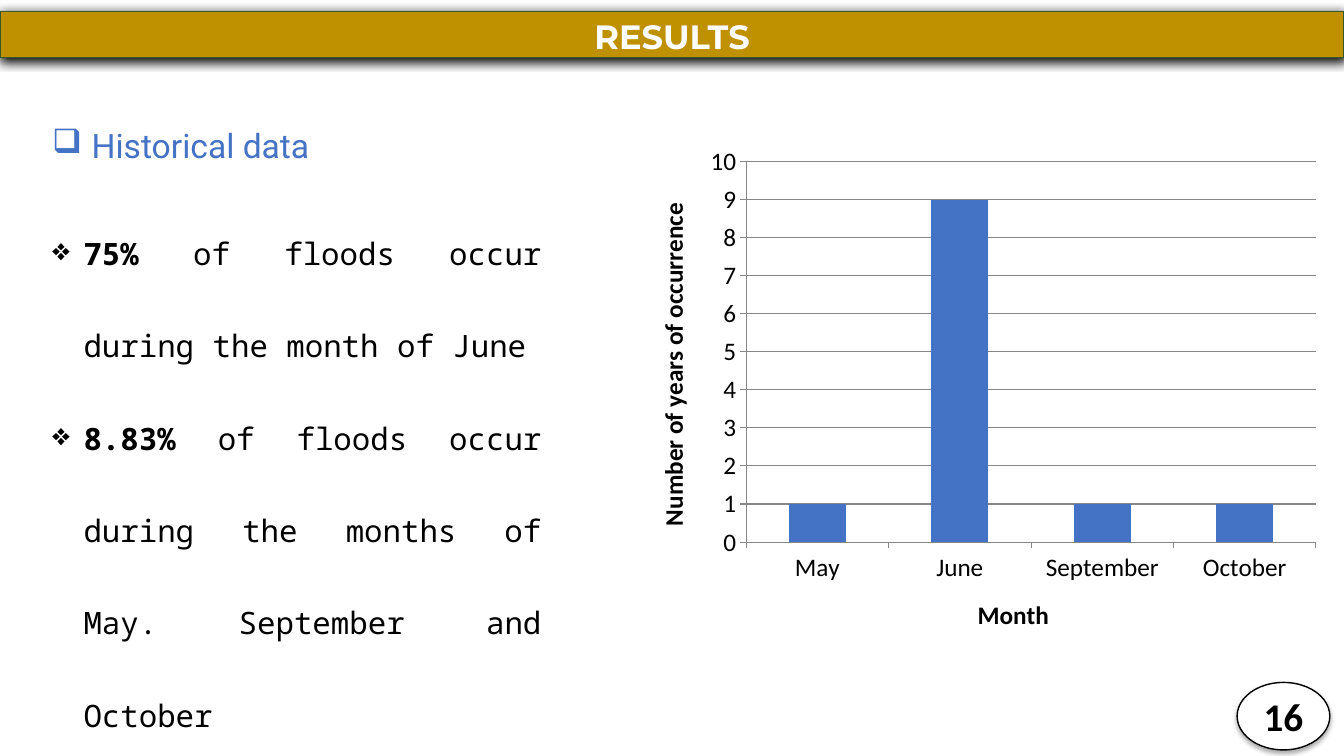
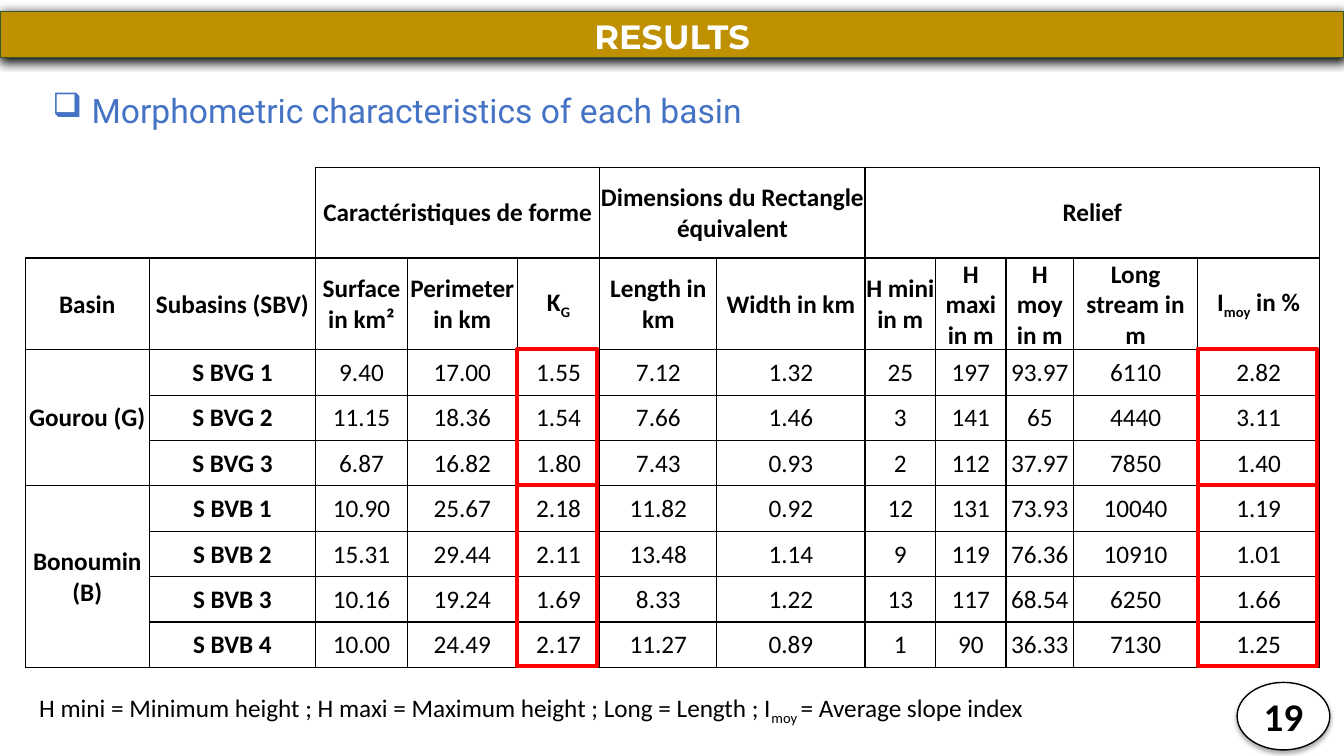
from itertools import accumulate

from lxml.etree import SubElement
from pptx import Presentation
from pptx.chart.data import CategoryChartData
from pptx.dml.color import RGBColor
from pptx.enum.chart import XL_CHART_TYPE as Chart, XL_TICK_MARK as Tick
from pptx.enum.shapes import MSO_SHAPE as Shape
from pptx.enum.text import MSO_ANCHOR as Anchor, MSO_AUTO_SIZE as AutoSize, PP_ALIGN as Align
from pptx.oxml import parse_xml
from pptx.oxml.ns import nsdecls, qn
from pptx.util import Emu, Inches, Pt

WIDTH, HEIGHT = Inches(13.33), Inches(7.5)
BLACK = RGBColor(0x00, 0x00, 0x00)
WHITE = RGBColor(0xFF, 0xFF, 0xFF)
GOLD = RGBColor(0xBF, 0x90, 0x00)
DARK_GREEN = RGBColor(0x38, 0x57, 0x23)
BLUE = RGBColor(0x44, 0x72, 0xC4)
RED = RGBColor(0xFF, 0x00, 0x00)
GREY = RGBColor(0x86, 0x86, 0x86)
BODY, TITLE, HEADING, MONO = "Calibri", "Montserrat", "Roboto", "Noto Sans Mono"
SUB = {"base": -25}

COLUMNS = [1.23, 1.65, 0.91, 1.09, 0.82, 1.16, 1.47, 0.7, 0.7, 0.67, 1.23, 1.21]
ROWS = [2, 2] + [1] * 7
GROUPS = [(2, 3, "Caractéristiques de forme"),
          (5, 2, "Dimensions du Rectangle équivalent"),
          (7, 5, "Relief")]
HEADERS = ["Basin", "Subasins (SBV)", "Surface in km²", "Perimeter in km",
           [("K", {}), ("G", SUB)], "Length in km", "Width in km", "H mini in m",
           "H maxi in m", "H moy in m", "Long stream in m",
           [("I", {}), ("moy", SUB), (" in %", {})]]
BASINS = {
    "Gourou (G)": [
        "S BVG 1|9.40|17.00|1.55|7.12|1.32|25|197|93.97|6110|2.82",
        "S BVG 2|11.15|18.36|1.54|7.66|1.46|3|141|65|4440|3.11",
        "S BVG 3|6.87|16.82|1.80|7.43|0.93|2|112|37.97|7850|1.40"],
    "Bonoumin (B)": [
        "S BVB 1|10.90|25.67|2.18|11.82|0.92|12|131|73.93|10040|1.19",
        "S BVB 2|15.31|29.44|2.11|13.48|1.14|9|119|76.36|10910|1.01",
        "S BVB 3|10.16|19.24|1.69|8.33|1.22|13|117|68.54|6250|1.66",
        "S BVB 4|10.00|24.49|2.17|11.27|0.89|1|90|36.33|7130|1.25"],
}
KEY_COLUMNS = (4, 11)


def area(x, y, w, h):
    """Box from percentages of the slide's width and height."""
    return [Emu(round(share * side / 100))
            for share, side in ((x, WIDTH), (y, HEIGHT), (w, WIDTH), (h, HEIGHT))]


def write(frame, *paragraphs, font=BODY, size=18, color=BLACK, bold=False,
          align=Align.LEFT, spacing=None, bullet=None, indent=0.31, anchor=Anchor.TOP):
    """Each paragraph is a string or a list of (text, overrides)."""
    frame.word_wrap = True
    frame.vertical_anchor = anchor
    for i, pieces in enumerate(paragraphs):
        para = frame.add_paragraph() if i else frame.paragraphs[0]
        para.alignment = align
        if spacing:
            para.line_spacing = spacing
        if bullet:
            props = para._p.get_or_add_pPr()
            props.set("marL", str(Inches(indent)))
            props.set("indent", str(-Inches(indent)))
            SubElement(props, qn("a:buChar")).set("char", bullet)
        for text, own in [(pieces, {})] if isinstance(pieces, str) else pieces:
            run = para.add_run()
            run.text = text
            run.font.name, run.font.size = font, Pt(size)
            run.font.bold = own.get("bold", bold)
            run.font.color.rgb = color
            if "base" in own:
                run._r.get_or_add_rPr().set("baseline", str(own["base"] * 1000))


def add_text(slide, box, *paragraphs, **style):
    frame = slide.shapes.add_textbox(*box).text_frame
    write(frame, *paragraphs, **style)
    frame.auto_size = AutoSize.SHAPE_TO_FIT_TEXT


def outline(shape, fill, line, weight):
    if fill is None:
        shape.fill.background()
    else:
        shape.fill.solid()
        shape.fill.fore_color.rgb = fill
    shape.line.color.rgb, shape.line.width = line, Pt(weight)


def cast_shadow(shape, alpha, blur, distance):
    shape._element.spPr.append(parse_xml(
        f'<a:effectLst {nsdecls("a")}><a:outerShdw blurRad="{Pt(blur)}" dist="{Pt(distance)}" '
        f'dir="5400000" algn="t" rotWithShape="0"><a:srgbClr val="{BLACK}">'
        f'<a:alpha val="{alpha * 1000}"/></a:srgbClr></a:outerShdw></a:effectLst>'))


# Parts shared by the slides
def start_slide(prs, number, heading, heading_box):
    slide = prs.slides.add_slide(prs.slide_layouts[5])
    band = slide.shapes.title
    band.left, band.top, band.width, band.height = area(0, 1.47, 100, 6.13)
    outline(band, GOLD, DARK_GREEN, 0.75)
    cast_shadow(band, 100, 8.5, 1)
    write(band.text_frame, "RESULTS", font=TITLE, size=24, color=WHITE, bold=True,
          align=Align.CENTER)
    band.text_frame.auto_size = AutoSize.NONE

    add_text(slide, heading_box, heading, font=HEADING, size=24, color=BLUE,
             spacing=1.5, bullet="❑", indent=0.39)

    badge = slide.shapes.add_shape(Shape.FLOWCHART_CONNECTOR, *area(92.05, 90.27, 6.9, 8.93))
    outline(badge, WHITE, BLACK, 1)
    cast_shadow(badge, 32, 3.5, 2.2)
    write(badge.text_frame, str(number), size=28, bold=True, align=Align.CENTER,
          anchor=Anchor.MIDDLE)
    return slide


# Flood months chart
def add_flood_chart(slide, box):
    data = CategoryChartData()
    data.categories = ["May", "June", "September", "October"]
    data.add_series("Series 1", [1, 9, 1, 1])
    chart = slide.shapes.add_chart(Chart.COLUMN_STACKED, *box, data).chart
    chart.has_title = chart.has_legend = False
    chart.font.name, chart.font.size, chart.font.color.rgb = BODY, Pt(18), BLACK

    plot = chart.plots[0]
    plot.gap_width, plot.overlap, plot.vary_by_categories = 150, 100, False
    bars = plot.series[0].format.fill
    bars.solid()
    bars.fore_color.rgb = BLUE

    months, years = chart.category_axis, chart.value_axis
    for axis, label in ((months, "Month"), (years, "Number of years of occurrence")):
        write_axis_title(axis, label)
        axis.major_tick_mark, axis.minor_tick_mark = Tick.OUTSIDE, Tick.NONE
        axis.format.line.color.rgb = GREY
    months.has_major_gridlines = False
    years.minimum_scale, years.maximum_scale, years.major_unit = 0, 10, 1
    years.has_major_gridlines = True
    years.major_gridlines.format.line.color.rgb = GREY


def write_axis_title(axis, label):
    axis.has_title = True
    run = axis.axis_title.text_frame.paragraphs[0].add_run()
    run.text = label
    run.font.name, run.font.size, run.font.bold = BODY, Pt(18), True
    run.font.color.rgb = BLACK


# Basin table
def format_cell(cell, bordered):
    cell.margin_left = cell.margin_right = cell.margin_top = Inches(0.01)
    cell.margin_bottom = 0
    props = cell._tc.get_or_add_tcPr()
    for side in "LRTB":
        line = SubElement(props, qn(f"a:ln{side}"), w=str(Pt(1)))
        if bordered:
            SubElement(SubElement(line, qn("a:solidFill")), qn("a:srgbClr"), val=str(BLACK))
        else:
            SubElement(line, qn("a:noFill"))
    cell.fill.background()


def fill_cell(cell, content, bold=True):
    write(cell.text_frame, content, bold=bold, align=Align.CENTER)
    cell.vertical_anchor = Anchor.MIDDLE


def add_basin_table(slide, box):
    left, top, width, height = box
    col_widths = [round(width * c / sum(COLUMNS)) for c in COLUMNS]
    row_heights = [round(height * r / sum(ROWS)) for r in ROWS]
    table = slide.shapes.add_table(len(ROWS), len(COLUMNS), *box).table
    table.first_row = table.horz_banding = False
    for column, size in zip(table.columns, col_widths):
        column.width = size
    for row, size in zip(table.rows, row_heights):
        row.height = size
    for r in range(len(ROWS)):
        for c in range(len(COLUMNS)):
            format_cell(table.cell(r, c), bordered=r > 0 or c > 1)

    # Two header rows
    table.cell(0, 0).merge(table.cell(0, 1))
    for first, count, label in GROUPS:
        table.cell(0, first).merge(table.cell(0, first + count - 1))
        fill_cell(table.cell(0, first), label)
    for c, label in enumerate(HEADERS):
        fill_cell(table.cell(1, c), label)

    # One block of rows per basin, with its key columns framed
    col_lefts = list(accumulate(col_widths, initial=left))
    row_tops = list(accumulate(row_heights, initial=top))
    start = 2
    for basin, subbasins in BASINS.items():
        end = start + len(subbasins)
        table.cell(start, 0).merge(table.cell(end - 1, 0))
        fill_cell(table.cell(start, 0), basin)
        for r, values in enumerate(subbasins, start):
            for c, value in enumerate(values.split("|"), 1):
                fill_cell(table.cell(r, c), value, bold=c == 1)
        for c in KEY_COLUMNS:
            frame = slide.shapes.add_shape(
                Shape.RECTANGLE, col_lefts[c], row_tops[start],
                col_widths[c] - Inches(0.03), row_tops[end] - row_tops[start])
            frame.shadow.inherit = False
            outline(frame, None, RED, 3)
        start = end


def historical_slide(prs):
    slide = start_slide(prs, 16, "Historical data", area(3.15, 13.2, 34.58, 9.47))
    add_text(slide, area(3.15, 23.07, 37.88, 63.07),
             [("75% ", {"bold": True}), ("of floods occur during the month of June", {})],
             [("8.83% ", {"bold": True}),
              ("of floods occur during the months of May. September and October", {})],
             font=MONO, size=22, align=Align.JUSTIFY, spacing=2.5, bullet="❖")
    add_flood_chart(slide, area(47.11, 18, 51.84, 68.67))


def morphometric_slide(prs):
    slide = start_slide(prs, 19, "Morphometric characteristics of each basin",
                        area(3.15, 8.53, 70.74, 9.47))
    add_basin_table(slide, area(1.88, 22.13, 96.32, 66))
    add_text(slide, area(2.18, 90.93, 97.15, 5.33),
             [("H mini = Minimum height ; H maxi = Maximum height ; Long = Length ; I", {}),
              ("moy ", SUB), ("= Average slope index", {})])


def main():
    prs = Presentation()
    prs.slide_width, prs.slide_height = WIDTH, HEIGHT
    historical_slide(prs)
    morphometric_slide(prs)
    prs.save("out.pptx")


if __name__ == "__main__":
    main()
